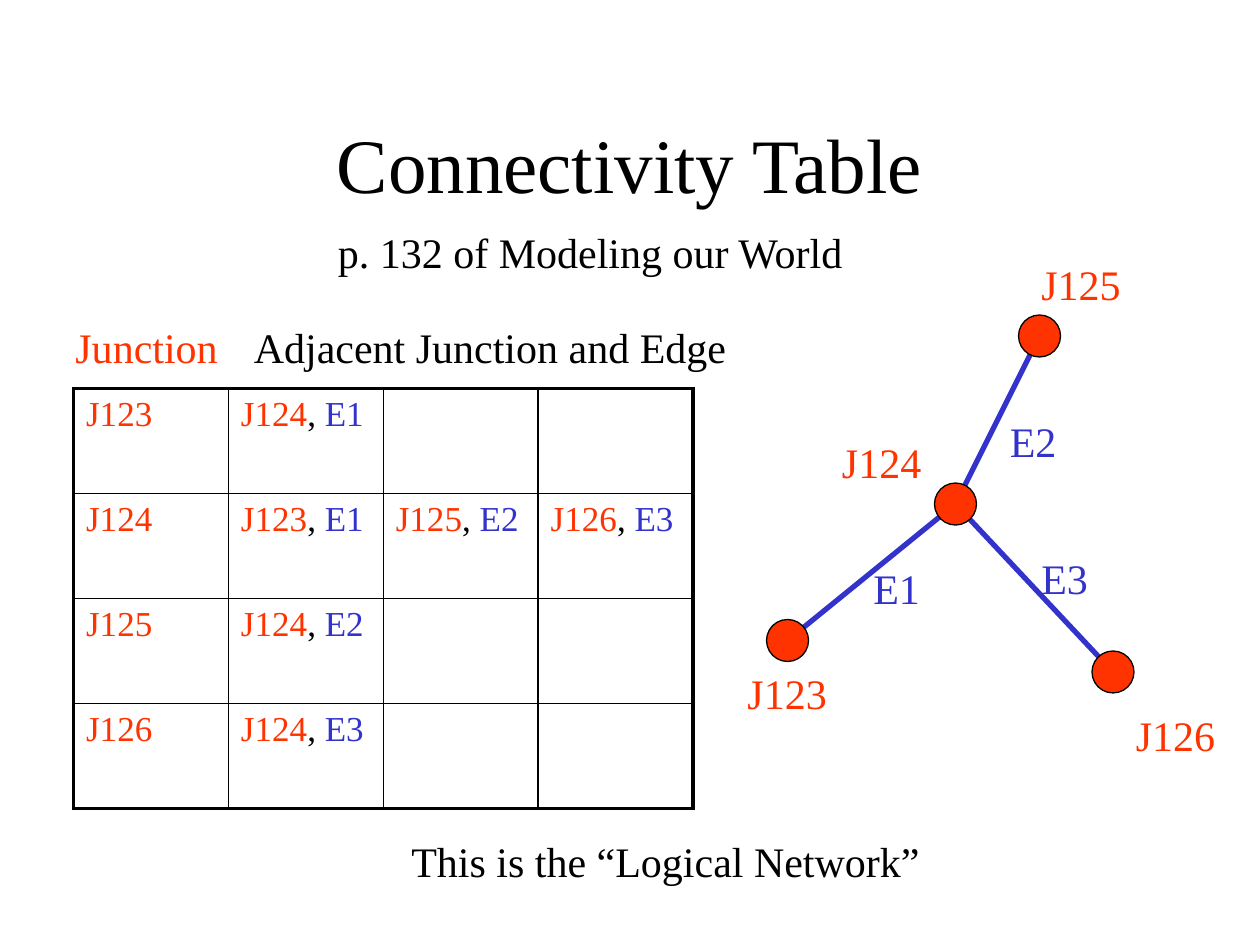
"""Build the Connectivity Table slide: a junction network beside its adjacency table."""
from lxml.etree import SubElement
from pptx import Presentation
from pptx.dml.color import RGBColor
from pptx.enum.shapes import MSO_CONNECTOR, MSO_SHAPE
from pptx.enum.text import MSO_ANCHOR, MSO_AUTO_SIZE, PP_ALIGN
from pptx.oxml.ns import qn
from pptx.util import Pt

BLACK, RED, BLUE = "000000", "FF3300", "3333CC"


def rgb(value):
    return RGBColor.from_string(value)


def write(frame, text, size=24, color=BLACK, align=PP_ALIGN.LEFT):
    paragraph = frame.paragraphs[0]
    paragraph.alignment = align
    run = paragraph.add_run()
    run.text = text
    run.font.name = "Times New Roman"
    run.font.size = Pt(size)
    run.font.color.rgb = rgb(color)


presentation = Presentation()
presentation.slide_width, presentation.slide_height = Pt(720), Pt(540)
slide = presentation.slides.add_slide(presentation.slide_layouts[6])
shapes = slide.shapes

junctions = {"J123": (450, 366), "J124": (546, 288), "J125": (594, 192), "J126": (636, 384)}
edges = {"E1": ("J123", "J124"), "E2": ("J124", "J125"), "E3": ("J124", "J126")}

for start, end in edges.values():
    ends = [Pt(value) for value in junctions[start] + junctions[end]]
    edge_line = shapes.add_connector(MSO_CONNECTOR.STRAIGHT, *ends)
    edge_line.line.color.rgb = rgb(BLUE)
    edge_line.line.width = Pt(3)
    SubElement(edge_line._element.spPr, qn("a:effectLst"))

title = shapes.add_textbox(Pt(54), Pt(48), Pt(612), Pt(90)).text_frame
title.word_wrap = True
title.vertical_anchor = MSO_ANCHOR.MIDDLE
write(title, "Connectivity Table", size=44, align=PP_ALIGN.CENTER)

diameter = 24
for x, y in junctions.values():
    node = shapes.add_shape(MSO_SHAPE.OVAL, Pt(x - diameter / 2), Pt(y - diameter / 2),
                            Pt(diameter), Pt(diameter))
    node.shadow.inherit = False
    node.fill.solid()
    node.fill.fore_color.rgb = rgb(RED)
    node.line.color.rgb = rgb(BLACK)
    node.line.width = Pt(0.75)

labels = [
    ("J124", 474, 246, 60, RED),
    ("J125", 588, 144, 60, RED),
    ("J123", 420, 378, 60, RED),
    ("J126", 642, 402, 60, RED),
    ("E1", 492, 318, 41, BLUE),
    ("E3", 588, 312, 41, BLUE),
    ("E2", 570, 234, 41, BLUE),
    ("Junction", 36, 180, 98, RED),
    ("Adjacent Junction and Edge", 138, 180, 288, BLACK),
    ("This is the “Logical Network”", 228, 474, 308, BLACK),
    ("p. 132 of Modeling our World", 186, 126, 308, BLACK),
]
for text, left, top, width, color in labels:
    label = shapes.add_textbox(Pt(left), Pt(top), Pt(width), Pt(36)).text_frame
    label.word_wrap = False
    label.auto_size = MSO_AUTO_SIZE.SHAPE_TO_FIT_TEXT
    write(label, text, color=color)

row_count, column_count = len(junctions), 1 + len(edges)
connectivity = shapes.add_table(row_count, column_count, Pt(42), Pt(222), Pt(354), Pt(240)).table
connectivity.first_row = connectivity.horz_banding = False

for row, junction in enumerate(junctions):
    write(connectivity.cell(row, 0).text_frame, junction, size=20, color=RED)
    adjacent = [(end if start == junction else start, edge)
                for edge, (start, end) in edges.items() if junction in (start, end)]
    for column, (neighbour, edge) in enumerate(adjacent, start=1):
        entry = connectivity.cell(row, column).text_frame
        for text, color in ((neighbour, RED), (", ", BLACK), (edge, BLUE)):
            write(entry, text, size=20, color=color)

    for column in range(column_count):
        cell = connectivity.cell(row, column)
        outer_sides = {"lnL": column == 0, "lnR": column == column_count - 1,
                       "lnT": row == 0, "lnB": row == row_count - 1}
        for side, is_outer in outer_sides.items():
            border = SubElement(cell._tc.get_or_add_tcPr(), qn(f"a:{side}"),
                                w=str(Pt(2.25 if is_outer else 1)))
            SubElement(SubElement(border, qn("a:solidFill")), qn("a:srgbClr"), val=BLACK)
        cell.fill.background()

presentation.save("out.pptx")
